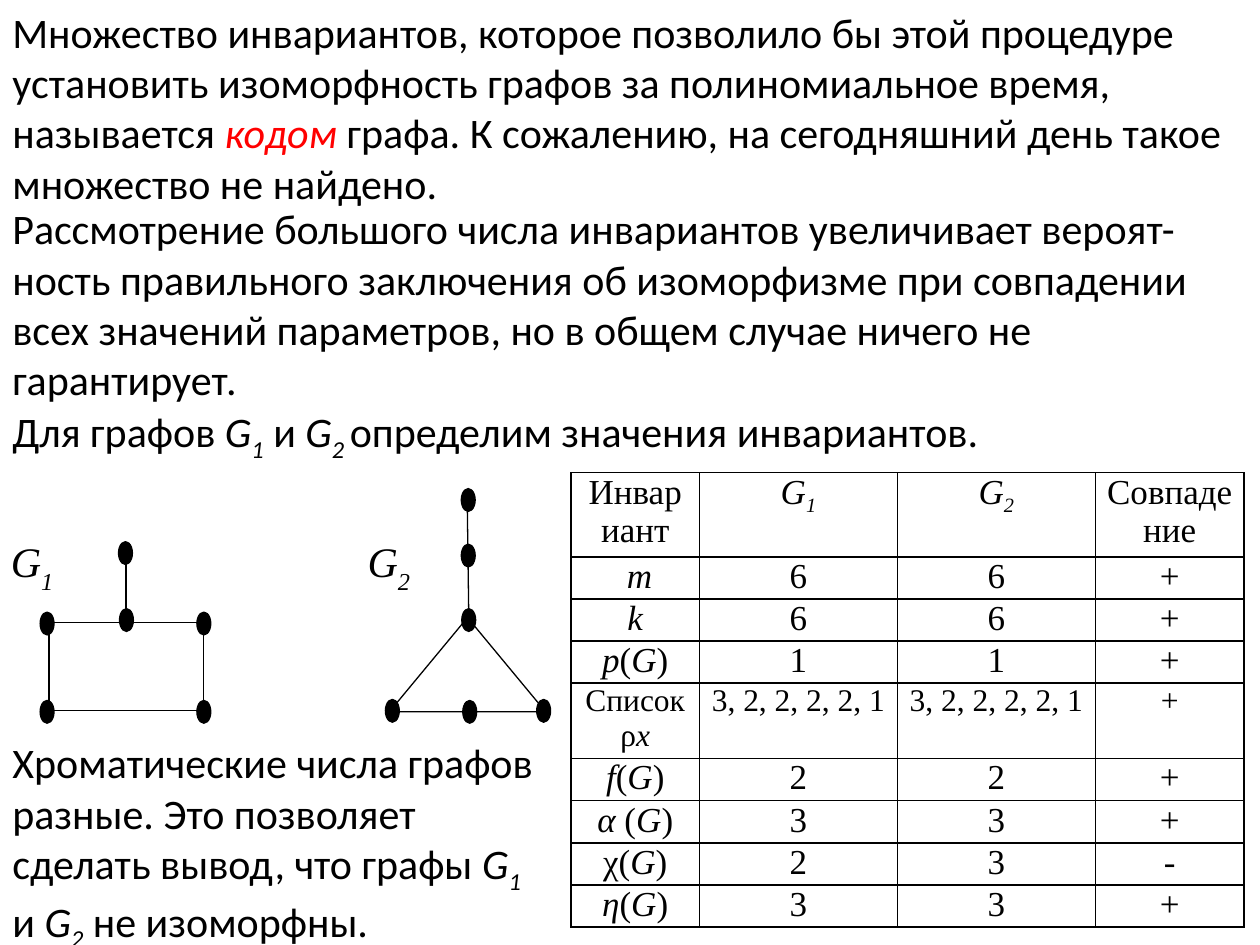
from dataclasses import dataclass

from lxml.etree import SubElement
from pptx import Presentation
from pptx.dml.color import RGBColor
from pptx.enum.shapes import MSO_CONNECTOR, MSO_SHAPE
from pptx.enum.text import MSO_ANCHOR, PP_ALIGN
from pptx.oxml import parse_xml
from pptx.oxml.ns import nsdecls, qn
from pptx.util import Cm, Pt

BLACK, WHITE, RED = "000000", "FFFFFF", "FF0000"
SANS, SERIF = "Calibri", "Times New Roman"


@dataclass(frozen=True)
class Span:
    text: str
    italic: bool = False
    baseline: int = 0
    color: str = BLACK


@dataclass(frozen=True)
class Graph:
    index: str
    label_box: tuple
    outline: MSO_SHAPE
    outline_box: tuple
    vertices: tuple
    edge: tuple


@dataclass(frozen=True)
class Invariant:
    name: list
    g1: str
    g2: str
    match: str = "+"
    size: int = 20


def rgb(color: str) -> RGBColor:
    return RGBColor.from_string(color)


def graph_name(index: str, drop: int = -25) -> list:
    return [Span("G", italic=True), Span(index, italic=True, baseline=drop)]


def of_graph(symbol: str, opening: str = "(", italic: bool = True) -> list:
    return [Span(symbol, italic), Span(opening), Span("G", True), Span(")")]


def write(tf, spans, *, size=24, font=SANS, align=PP_ALIGN.LEFT) -> None:
    p = tf.paragraphs[0]
    p.alignment = align
    for span in spans:
        r = p.add_run()
        r.text = span.text
        r.font.size, r.font.name = Pt(size), font
        r.font.italic = span.italic
        r.font.color.rgb = rgb(span.color)
        if span.baseline:
            r.font._element.set("baseline", str(span.baseline * 1000))


def add_text(s, box: tuple, spans: list) -> None:
    tf = s.shapes.add_textbox(*map(Cm, box)).text_frame
    tf.word_wrap = True
    write(tf, spans)


def add_figure(group, kind, box: tuple, fill=None, line: str = BLACK):
    sp = group.shapes.add_shape(kind, *map(Cm, box))
    sp.shadow.inherit = False
    if fill:
        sp.fill.solid()
        sp.fill.fore_color.rgb = rgb(fill)
    else:
        sp.fill.background()
    sp.line.color.rgb = rgb(line)
    sp.line.width = Pt(0.75)
    return sp


def draw_graph(s, graph: Graph) -> None:
    group = s.shapes.add_group_shape()
    add_figure(group, graph.outline, graph.outline_box, fill=WHITE)
    label = add_figure(group, MSO_SHAPE.RECTANGLE, graph.label_box, line=WHITE)
    label.text_frame.vertical_anchor = MSO_ANCHOR.TOP
    write(label.text_frame, graph_name(graph.index, -30), font=SERIF)

    # Vertices are given by their centres
    w, h = 0.28, 0.46
    for x, y in graph.vertices:
        add_figure(group, MSO_SHAPE.OVAL, (x - w / 2, y - h / 2, w, h), fill=BLACK)

    # Pendant edge
    edge = group.shapes.add_connector(MSO_CONNECTOR.STRAIGHT, *map(Cm, graph.edge))
    edge.line.color.rgb = rgb(BLACK)
    edge.line.width = Pt(0.75)
    SubElement(edge._element.spPr, qn("a:effectLst"))


def add_borders(cell) -> None:
    tc_pr = cell._tc.get_or_add_tcPr()
    for i, side in enumerate("LRTB"):
        tc_pr.insert(i, parse_xml(
            f'<a:ln{side} {nsdecls("a")} w="12700"><a:solidFill>'
            f'<a:srgbClr val="{BLACK}"/></a:solidFill></a:ln{side}>'))


def fill_cell(cell, spans: list, size: int) -> None:
    cell.margin_left = cell.margin_right = Cm(0.18)
    cell.margin_top = cell.margin_bottom = 0
    cell.fill.background()
    add_borders(cell)
    write(cell.text_frame, spans, size=size, font=SERIF, align=PP_ALIGN.CENTER)


def add_invariants(s, invariants: list) -> None:
    header = [[Span("Инвариант")], graph_name("1"), graph_name("2"),
              [Span("Совпадение")]]
    widths = (2.59, 3.99, 3.99, 3)
    frame = s.shapes.add_table(len(invariants) + 1, len(widths),
                               Cm(11.51), Cm(9.53), Cm(13.59), Cm(9.14))
    table = frame.table
    table.first_row = table.horz_banding = False
    for column, width in zip(table.columns, widths):
        column.width = Cm(width)
    for row in table.rows:
        row.height = Cm(0.71)

    rows = [(header, 20)]
    for inv in invariants:
        values = [[Span(v)] for v in (inv.g1, inv.g2, inv.match)]
        rows.append(([inv.name, *values], inv.size))
    for row, (contents, size) in zip(table.rows, rows):
        for cell, spans in zip(row.cells, contents):
            fill_cell(cell, spans, size)


GRAPHS = [
    Graph("1", (-0.03, 10.67, 1.6, 1.37),
          MSO_SHAPE.RECTANGLE, (0.99, 12.55, 3.12, 1.78),
          ((2.53, 11.15), (2.55, 12.5), (0.95, 14.35), (0.95, 12.57),
           (4.11, 12.57), (4.11, 14.35)),
          (2.54, 11.28, 2.54, 12.47)),
    Graph("2", (7.16, 10.67, 1.7, 1.65),
          MSO_SHAPE.ISOSCELES_TRIANGLE, (7.85, 12.45, 3.15, 1.9),
          ((9.44, 10.08), (9.44, 11.2), (10.96, 14.33), (9.47, 14.35),
           (9.45, 12.5), (7.91, 14.33)),
          (9.42, 10.19, 9.45, 12.37)),
]
DEGREES = "3, 2, 2, 2, 2, 1"
INVARIANTS = [
    Invariant([Span(" "), Span("m", italic=True)], "6", "6"),
    Invariant([Span("k", italic=True)], "6", "6"),
    Invariant(of_graph("р"), "1", "1"),
    Invariant([Span("Список ρ"), Span("x", italic=True)], DEGREES, DEGREES, size=18),
    Invariant(of_graph("f"), "2", "2"),
    Invariant(of_graph("α", " ("), "3", "3"),
    Invariant(of_graph("χ", italic=False), "2", "3", "-"),
    Invariant(of_graph("η"), "3", "3"),
]


def main() -> None:
    prs = Presentation()
    prs.slide_width, prs.slide_height = Cm(25.4), Cm(19.05)
    s = prs.slides.add_slide(prs.slide_layouts[6])

    # Explanation
    add_text(s, (0, 0, 25.4, 4.37), [
        Span("Множество инвариантов, которое позволило бы этой процедуре установить "
             "изоморфность графов за полиномиальное время, называется "),
        Span("кодом", italic=True, color=RED),
        Span(" графа. К сожалению, на сегодняшний день такое множество не найдено.")])
    add_text(s, (0, 3.96, 25.4, 4.37), [
        Span("Рассмотрение большого числа инвариантов увеличивает вероят-ность "
             "правильного заключения об изоморфизме при совпадении всех значений "
             "параметров, но в общем случае ничего не гарантирует.")])
    add_text(s, (0, 8.05, 25.4, 1.27), [
        Span("Для графов "), *graph_name("1"), Span(" и "), *graph_name("2 "),
        Span("определим значения инвариантов.")])

    # Graphs and their invariants
    for graph in GRAPHS:
        draw_graph(s, graph)
    add_invariants(s, INVARIANTS)

    # Conclusion
    add_text(s, (0, 14.73, 11.3, 4.37), [
        Span("Хроматические числа графов разные. Это позволяет сделать вывод, "
             "что графы "), *graph_name("1 "), Span("и "), *graph_name("2"),
        Span(" не изоморфны.")])

    prs.save("out.pptx")


if __name__ == "__main__":
    main()
